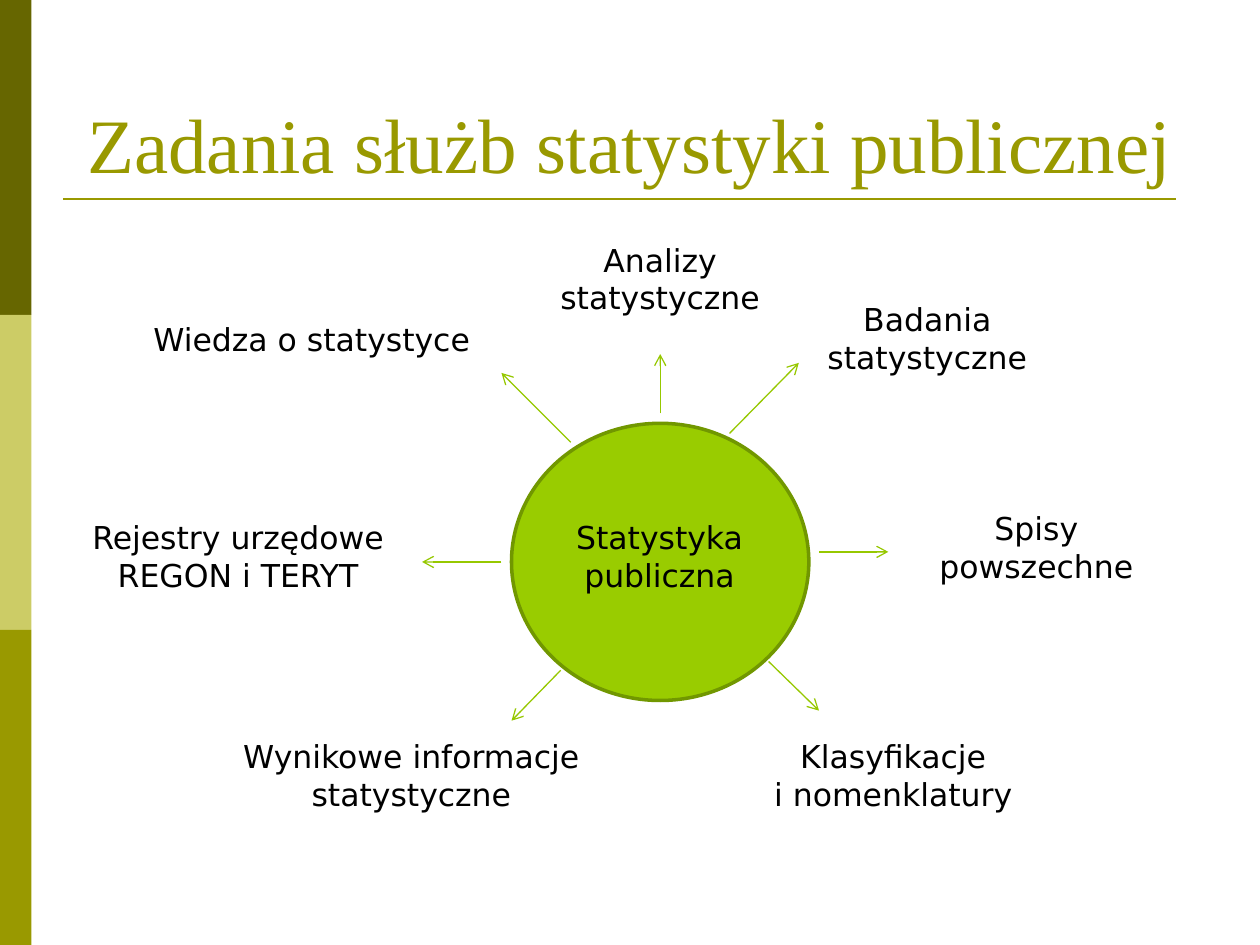
from lxml import etree
from pptx import Presentation
from pptx.dml.color import RGBColor
from pptx.enum.shapes import MSO_CONNECTOR as Connector, MSO_SHAPE as Shape
from pptx.enum.text import MSO_ANCHOR as Anchor, PP_ALIGN as Align
from pptx.oxml.ns import qn
from pptx.util import Inches, Pt

DARK_OLIVE = RGBColor(0x66, 0x66, 0x00)
PALE_OLIVE = RGBColor(0xCC, 0xCC, 0x66)
OLIVE = RGBColor(0x99, 0x99, 0x00)
LIME = RGBColor(0x99, 0xCC, 0x00)
LIME_EDGE = RGBColor(0x71, 0x97, 0x00)
ARROW_GREEN = RGBColor(0x96, 0xC8, 0x00)
BLACK = RGBColor(0x00, 0x00, 0x00)

TITLE_FORMAT = {"name": "Times New Roman", "size": Pt(44)}
LABEL_FORMAT = {"name": "DejaVu Sans", "size": Pt(18)}

LABELS = [
    ("Statystyka publiczna", 3.62, 2.2, 2.05, 0.71),
    ("Analizy statystyczne", 3.47, 0, 2.36, 0.71),
    ("Badania statystyczne", 5.67, 0.47, 2.2, 0.71),
    ("Spisy powszechne", 6.69, 2.13, 1.89, 0.71),
    ("Klasyfikacje\ni nomenklatury", 5.12, 3.94, 2.76, 0.71),
    ("Wynikowe informacje statystyczne", 1.1, 3.94, 3.15, 0.71),
    ("Rejestry urzędowe REGON i TERYT", 0, 2.2, 2.6, 0.71),
    ("Wiedza o statystyce", 0.39, 0.63, 2.99, 0.4),
]
ARROWS = [
    (4.65, 1.42, 4.65, 0.95),
    (5.2, 1.58, 5.75, 1.02),
    (5.91, 2.52, 6.46, 2.52),
    (5.51, 3.39, 5.91, 3.78),
    (3.86, 3.46, 3.47, 3.86),
    (3.39, 2.6, 2.76, 2.6),
    (3.94, 1.65, 3.39, 1.1),
]


def add_text(page, box, text, formats, color, anchor=Anchor.TOP):
    """Place centred, wrapped text in the box."""
    frame = page.shapes.add_textbox(*map(Inches, box)).text_frame
    frame.word_wrap = True
    frame.vertical_anchor = anchor
    para = frame.paragraphs[0]
    para.text = text
    para.alignment = Align.CENTER
    for span in para.runs:
        for name, value in formats.items():
            setattr(span.font, name, value)
        span.font.color.rgb = color


def add_filled(page, kind, box, fill, edge=None):
    """Place a plain filled shape, with an outline if an edge colour is given."""
    shape = page.shapes.add_shape(kind, *map(Inches, box))
    shape.shadow.inherit = False
    shape.fill.solid()
    shape.fill.fore_color.rgb = fill
    if edge is None:
        shape.line.fill.background()
    else:
        shape.line.color.rgb = edge
        shape.line.width = Pt(2)


def add_line(page, ends, color, width, arrow=False):
    """Draw a straight line, with an open arrowhead at its end if asked."""
    line = page.shapes.add_connector(Connector.STRAIGHT, *map(Inches, ends))
    line.line.color.rgb = color
    line.line.width = Pt(width)
    if arrow:
        etree.SubElement(line.line._get_or_add_ln(), qn("a:tailEnd"), type="arrow")
    etree.SubElement(line._element.spPr, qn("a:effectLst"))


def add_sidebar(page, box):
    """Stack equal colour bands down the box."""
    left, top, width, height = box
    colors = (DARK_OLIVE, PALE_OLIVE, OLIVE)
    band = height / len(colors)
    for index, color in enumerate(colors):
        add_filled(page, Shape.RECTANGLE, (left, top + index * band, width, band), color)


def add_title(page, box):
    """Place the title at the foot of the box with a rule below it."""
    left, top, width, height = box
    add_text(page, box, "Zadania służb statystyki publicznej", TITLE_FORMAT, OLIVE, Anchor.BOTTOM)
    rule = top + height + 0.03
    add_line(page, (left, rule, left + width - 0.17, rule), OLIVE, 1.5)


def add_task_diagram(page, box):
    """Draw the central circle with arrows out to the task labels."""
    left, top = box[:2]
    add_filled(page, Shape.OVAL, (left + 3.47, top + 1.5, 2.36, 2.2), LIME, LIME_EDGE)
    for x1, y1, x2, y2 in ARROWS:
        add_line(page, (left + x1, top + y1, left + x2, top + y2), ARROW_GREEN, 0.75, True)
    for text, x, y, width, height in LABELS:
        add_text(page, (left + x, top + y, width, height), text, LABEL_FORMAT, BLACK)


def main():
    """Build the slide and save the deck."""
    deck = Presentation()
    deck.slide_width, deck.slide_height = Inches(10), Inches(7.5)
    page = deck.slides.add_slide(deck.slide_layouts[6])
    add_sidebar(page, (0, 0, 0.25, 7.5))
    add_title(page, (0.5, 0.3, 9, 1.25))
    add_task_diagram(page, (0.59, 1.86, 8.58, 4.65))
    deck.save("out.pptx")


if __name__ == "__main__":
    main()
